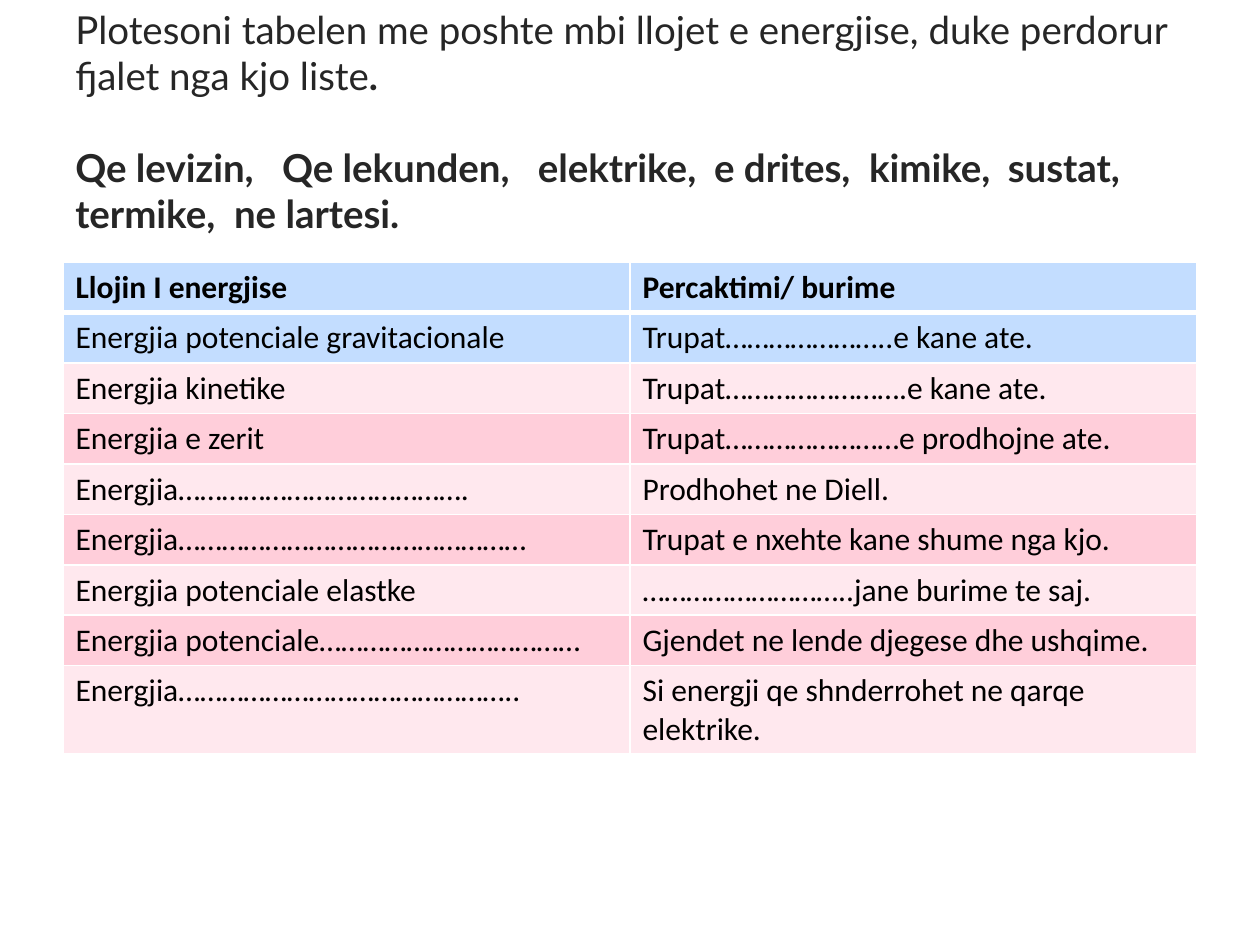
"""Build a worksheet slide with a fill-in table on kinds of energy."""
from lxml import etree
from pptx import Presentation
from pptx.dml.color import RGBColor
from pptx.enum.text import MSO_ANCHOR
from pptx.oxml.ns import qn
from pptx.util import Inches, Pt

MIDDLE = MSO_ANCHOR.MIDDLE
INK = RGBColor(0x26, 0x26, 0x26)
BLACK = RGBColor(0x00, 0x00, 0x00)
WHITE = RGBColor(0xFF, 0xFF, 0xFF)
BLUE = RGBColor(0xC3, 0xDD, 0xFF)
PALE_PINK = RGBColor(0xFF, 0xE8, 0xEE)
PINK = RGBColor(0xFF, 0xCE, 0xDA)

INSTRUCTION = "Plotesoni tabelen me poshte mbi llojet e energjise, duke perdorur fjalet nga kjo liste"
WORD_LIST = "Qe levizin,\tQe lekunden,\telektrike,\te drites,\tkimike,\tsustat, termike,\tne lartesi."
WORD_STOPS = [1.26, 1.64, 3.67, 5.07, 6.3, 7.4]
ENERGY_ROWS = [
    ("Llojin I energjise", "Percaktimi/ burime"),
    ("Energjia potenciale gravitacionale", "Trupat…………………..e kane ate."),
    ("Energjia kinetike", "Trupat…………………….e kane ate."),
    ("Energjia e zerit", "Trupat……………………e prodhojne ate."),
    ("Energjia………………………………….", "Prodhohet ne Diell."),
    ("Energjia…………………………………………", "Trupat e nxehte kane shume nga kjo."),
    ("Energjia potenciale elastke", "………………………..jane burime te saj."),
    ("Energjia potenciale………………………………", "Gjendet ne lende djegese dhe ushqime."),
    ("Energjia………………………………………..", "Si energji qe shnderrohet ne qarqe elektrike."),
]


def style(font, name, size, color, bold):
    font.name, font.size, font.bold = name, Pt(size), bold
    font.color.rgb = color


def add_tab_stops(paragraph, stops):
    tabs = etree.SubElement(paragraph._p.get_or_add_pPr(), qn("a:tabLst"))
    for stop in stops:
        etree.SubElement(tabs, qn("a:tab"), pos=str(Inches(stop)), algn="l")


def add_borders(cell, widths):
    properties = cell._tc.get_or_add_tcPr()
    for side, width in widths.items():
        line = etree.SubElement(properties, qn(f"a:ln{side}"), w=str(Pt(width)))
        fill = etree.SubElement(line, qn("a:solidFill"))
        etree.SubElement(fill, qn("a:srgbClr"), val=str(WHITE))


def add_heading(slide):
    frame = slide.shapes.add_textbox(Inches(0.5), Inches(0.25), Inches(9), Inches(1.42)).text_frame
    frame.word_wrap = True
    frame.vertical_anchor = MIDDLE
    instruction = frame.paragraphs[0]
    style(instruction.font, "Lato", 22, INK, False)
    instruction.add_run().text = INSTRUCTION
    full_stop = instruction.add_run()
    full_stop.text = "."
    full_stop.font.bold = True
    words = frame.add_paragraph()
    words.text = WORD_LIST
    add_tab_stops(words, WORD_STOPS)
    words.space_before = Pt(26.4)
    style(words.font, "Lato", 22, INK, True)


def add_energy_table(slide):
    last = len(ENERGY_ROWS) - 1
    table = slide.shapes.add_table(
        len(ENERGY_ROWS), 2, Inches(0.5), Inches(2.08), Inches(9), Inches(3.9)
    ).table
    for r, texts in enumerate(ENERGY_ROWS):
        table.rows[r].height = Inches(0.7 if r == last else 0.4)
        color = BLUE if r < 2 else (PINK if r % 2 else PALE_PINK)
        borders = {"L": 1, "R": 1, "T": 3 if r == 1 else 1, "B": 3 if r == 0 else 1}
        for c, text in enumerate(texts):
            cell = table.cell(r, c)
            cell.text = text
            style(cell.text_frame.paragraphs[0].font, "Calibri", 18, BLACK, r == 0)
            add_borders(cell, borders)
            cell.fill.solid()
            cell.fill.fore_color.rgb = color


def main():
    deck = Presentation()
    deck.slide_width, deck.slide_height = Inches(10), Inches(7.5)
    slide = deck.slides.add_slide(deck.slide_layouts[6])
    add_heading(slide)
    add_energy_table(slide)
    deck.save("out.pptx")


if __name__ == "__main__":
    main()
